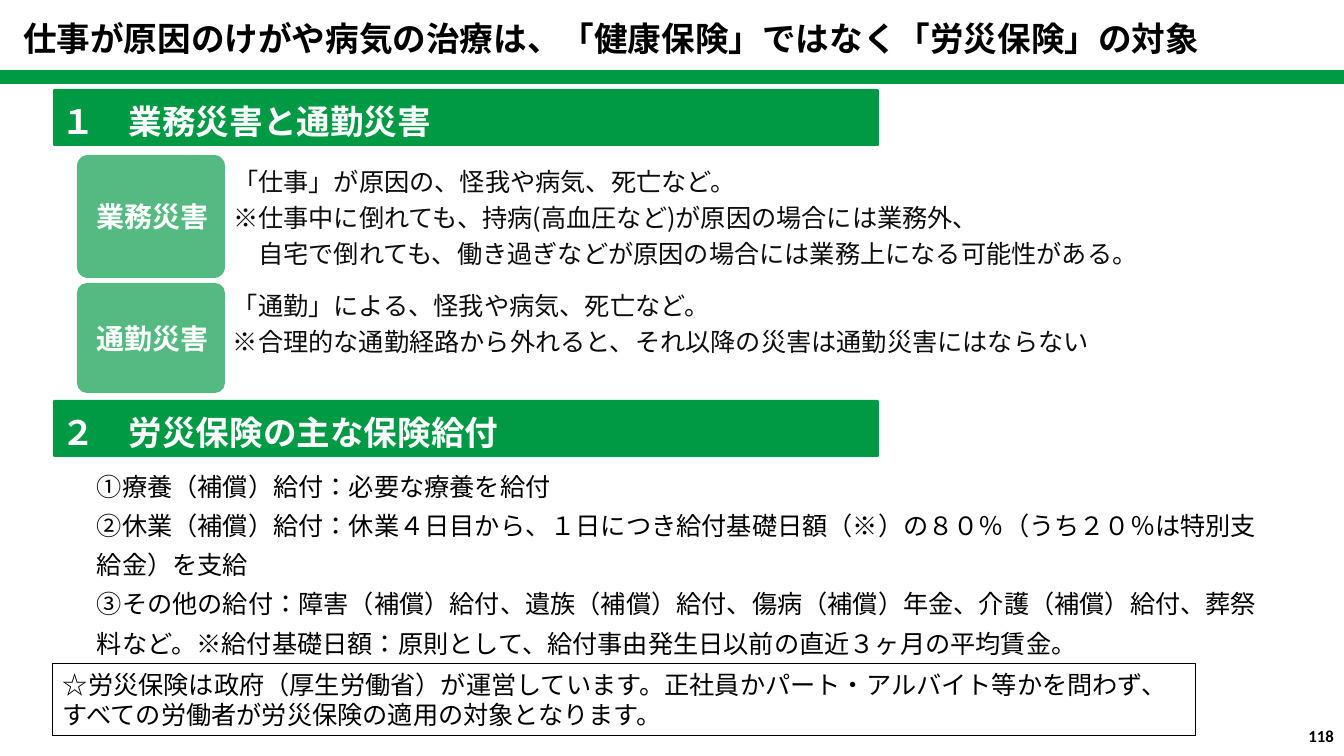
import pptx
import pptx.util
import pptx.dml.color
import pptx.enum.lang
import pptx.enum.shapes
import pptx.enum.text
import pptx.oxml.ns
from dataclasses import dataclass
from lxml import etree

Kind = pptx.enum.shapes.MSO_SHAPE
Align = pptx.enum.text.PP_ALIGN
Anchor = pptx.enum.text.MSO_ANCHOR
qn = pptx.oxml.ns.qn


@dataclass(frozen=True)
class Theme:
    font: str = "Noto Sans CJK JP"
    latin: str = "Calibri"
    green: str = "009944"
    white: str = "FFFFFF"
    black: str = "000000"
    ink: str = "0D0D0D"
    head: int = 24
    tag: int = 20
    body: int = 18
    page: int = 12


def px(num):
    return round(num * 914400 / 100.8)


def color(code):
    return pptx.dml.color.RGBColor.from_string(code)


def apply(item, form):
    for name, value in form.items():
        setattr(item, name, value)


class Deck:
    def __init__(self, theme):
        self.theme = theme
        self.file = pptx.Presentation()
        apply(self.file, {"slide_width": px(1344), "slide_height": px(756)})
        self.slide = self.file.slides.add_slide(self.file.slide_layouts[1])

    def place(self, shape, area):
        apply(shape, dict(zip(("left", "top", "width", "height"), map(px, area))))

    def label(self, shape, lines, size, ink, bold=False, pad=(10, 5, 10, 5),
              anchor=Anchor.TOP, align=Align.LEFT, space=1.0, font=None):
        frame = shape.text_frame
        sides = ("margin_left", "margin_top", "margin_right", "margin_bottom")
        apply(frame, {"word_wrap": True, "vertical_anchor": anchor,
                      "auto_size": pptx.enum.text.MSO_AUTO_SIZE.NONE,
                      **dict(zip(sides, map(px, pad)))})
        frame.text = "\n".join(lines)
        font = font or self.theme.font
        for para in frame.paragraphs:
            apply(para, {"alignment": align, "line_spacing": space,
                         "space_before": pptx.util.Pt(0)})
            for run in para.runs:
                apply(run.font, {"name": font, "size": pptx.util.Pt(size), "bold": bold,
                                 "language_id": pptx.enum.lang.MSO_LANGUAGE_ID.JAPANESE})
                run.font.color.rgb = color(ink)
                etree.SubElement(run.font._element, qn("a:ea"), typeface=font)

    def shape(self, area, kind=Kind.RECTANGLE, fill=None, alpha=None, line=None, curve=None):
        shape = self.slide.shapes.add_shape(kind, *map(px, area))
        shape.shadow.inherit = False
        if curve is not None:
            shape.adjustments[0] = curve
        if fill:
            shape.fill.solid()
            shape.fill.fore_color.rgb = color(fill)
        else:
            shape.fill.background()
        if alpha:
            tint = shape._element.spPr.find(qn("a:solidFill"))[0]
            etree.SubElement(tint, qn("a:alpha"), val=str(alpha * 1000))
        if line:
            shape.line.color.rgb = color(line)
            shape.line.width = pptx.util.Pt(0.75)
        else:
            shape.line.fill.background()
        return shape

    def title(self, text, area):
        shape = self.slide.shapes.title
        self.place(shape, area)
        self.label(shape, [text], self.theme.head, self.theme.black, True)

    def list(self, lines, area):
        shape = self.slide.placeholders[1]
        self.place(shape, area)
        self.label(shape, lines, self.theme.body, self.theme.black,
                   pad=(4, 20, 4, 5), space=pptx.util.Pt(28))
        for para in shape.text_frame.paragraphs:
            props = para._p.get_or_add_pPr()
            props.set("marL", "0")
            props.set("indent", "0")
            etree.SubElement(props, qn("a:buNone"))

    def band(self, text, top):
        shape = self.shape((53, top, 826, 57), Kind.ROUNDED_RECTANGLE,
                           self.theme.green, curve=0.03)
        self.label(shape, [text], self.theme.head, self.theme.white, True,
                   (8, 4, 0, 4), Anchor.MIDDLE, space=1.2)

    def case(self, name, lines, top, high, start):
        tag = self.shape((77, top, 148, high), Kind.ROUNDED_RECTANGLE,
                         self.theme.green, 67, curve=0.09)
        self.label(tag, [name], self.theme.tag, self.theme.white, True,
                   (8, 4, 4, 4), Anchor.MIDDLE, Align.CENTER)
        text = self.shape((224, start, 1004, high), Kind.ROUNDED_RECTANGLE, curve=0.03)
        self.label(text, lines, self.theme.body, self.theme.ink,
                   pad=(8, 4, 0, 4), space=1.2)

    def note(self, text, area):
        shape = self.shape(area, line=self.theme.black)
        self.label(shape, [text], self.theme.body, self.theme.black)

    def page(self, text, area):
        shape = self.slide.shapes.add_textbox(*map(px, area))
        self.label(shape, [text], self.theme.page, self.theme.black, True,
                   anchor=Anchor.MIDDLE, align=Align.RIGHT, font=self.theme.latin)


def main():
    deck = Deck(Theme())
    deck.title("仕事が原因のけがや病気の治療は、「健康保険」ではなく「労災保険」の対象",
               (13, 13, 1294, 50))
    deck.list([
        "①療養（補償）給付：必要な療養を給付",
        "②休業（補償）給付：休業４日目から、１日につき給付基礎日額（※）の８０％（うち２０％は特別支給金）を支給",
        "③その他の給付：障害（補償）給付、遺族（補償）給付、傷病（補償）年金、介護（補償）給付、葬祭料など。"
        "※給付基礎日額：原則として、給付事由発生日以前の直近３ヶ月の平均賃金。",
    ], (93, 442, 1174, 223))
    deck.shape((0, 70, 1344, 14), fill=deck.theme.green)
    deck.band("１　業務災害と通勤災害", 89)
    deck.band("２　労災保険の主な保険給付", 400)
    deck.case("業務災害", [
        "「仕事」が原因の、怪我や病気、死亡など。",
        "※仕事中に倒れても、持病(高血圧など)が原因の場合には業務外、",
        "　自宅で倒れても、働き過ぎなどが原因の場合には業務上になる可能性がある。",
    ], 155, 123, 155)
    deck.case("通勤災害", [
        "「通勤」による、怪我や病気、死亡など。",
        "※合理的な通勤経路から外れると、それ以降の災害は通勤災害にはならない",
    ], 283, 110, 279)
    deck.note("☆労災保険は政府（厚生労働省）が運営しています。正社員かパート・アルバイト等かを問わず、"
              "すべての労働者が労災保険の適用の対象となります。", (53, 664, 1143, 72))
    deck.page("118", (1030, 716, 314, 40))
    deck.file.save("out.pptx")


if __name__ == "__main__":
    main()
